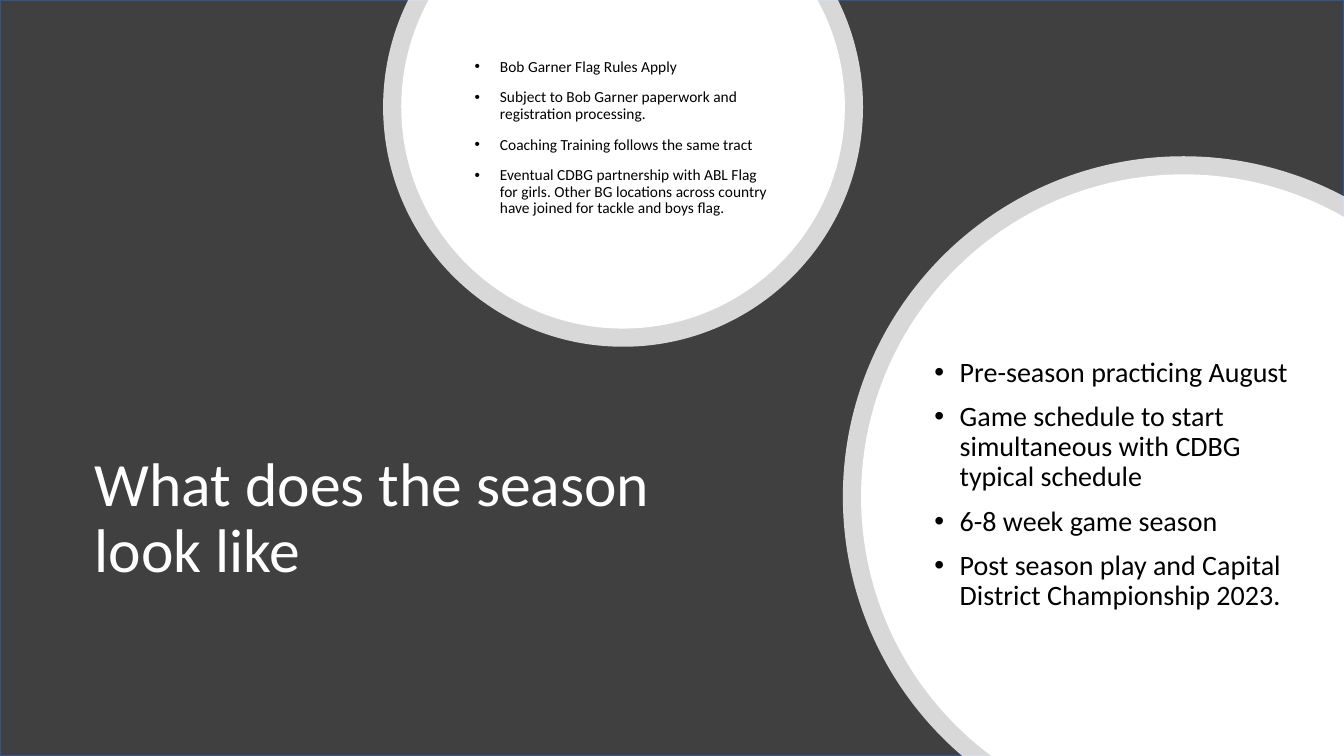
from math import acos, asin, cos, pi, sin, tan

from lxml.etree import SubElement
from pptx import Presentation
from pptx.dml.color import RGBColor
from pptx.enum.shapes import MSO_SHAPE as Preset
from pptx.enum.text import MSO_ANCHOR as Anchor
from pptx.oxml.ns import qn
from pptx.util import Inches, Pt

COLORS = {"backdrop": "404040", "outline": "325491", "white": "FFFFFF", "text": "000000"}
FONT = "Calibri"
WIDTH, HEIGHT = 13.33, 7.5
RIM = 0.18

TITLE = "What does the season look like"
RULES = [
    "Bob Garner Flag Rules Apply",
    "Subject to Bob Garner paperwork and registration processing.",
    "Coaching Training follows the same tract",
    "Eventual CDBG partnership with ABL Flag for girls. Other BG locations across country "
    "have joined for tackle and boys flag.",
]
SCHEDULE = [
    "Pre-season practicing August",
    "Game schedule to start simultaneous with CDBG typical schedule",
    "6-8 week game season",
    "Post season play and Capital District Championship 2023.",
]


def color(name):
    return RGBColor.from_string(COLORS[name])


def paint(shape, fill, alpha=None):
    shape.shadow.inherit = False
    shape.fill.solid()
    shape.fill.fore_color.rgb = color(fill)
    shape.line.fill.background()
    if alpha is not None:
        srgb = shape.fill._xPr.find(qn("a:solidFill"))[0]
        SubElement(srgb, qn("a:alpha"), val=str(alpha * 1000))


def add_backdrop(slide, box):
    shape = slide.shapes.add_shape(Preset.RECTANGLE, *map(Inches, box))
    paint(shape, "backdrop")
    shape.line.color.rgb = color("outline")
    shape.line.width = Pt(1)


def top_arc(center, radius):
    start = asin(-center[1] / radius)
    return [start, 0, pi / 2, pi, pi - start]


def corner_arc(center, radius):
    start = pi - asin((HEIGHT - center[1]) / radius)
    end = 2 * pi - acos((WIDTH - center[0]) / radius)
    return [start, pi, 3 * pi / 2, end]


def curve_points(center, radius, angles):
    def locate(angle, pull=0):
        return (center[0] + radius * (cos(angle) - pull * sin(angle)),
                center[1] + radius * (sin(angle) + pull * cos(angle)))

    points = [locate(angles[0])]
    for start, end in zip(angles, angles[1:]):
        pull = 4 / 3 * tan((end - start) / 4)
        points += [locate(start, pull), locate(end, -pull), locate(end)]
    return points


def bend(shape, curve_count):
    lines = list(shape._element.iter(qn("a:lnTo")))
    for index in range(curve_count):
        first, *others = lines[3 * index:3 * index + 3]
        outline = first.getparent()
        curve = outline.makeelement(qn("a:cubicBezTo"))
        outline.replace(first, curve)
        curve.append(first[0])
        for line in others:
            curve.append(line[0])
            outline.remove(line)


def add_disc(slide, center, radius, arc, corners, alpha=None):
    angles = arc(center, radius)
    points = curve_points(center, radius, angles) + corners
    outline = [(Inches(x), Inches(y)) for x, y in points]
    builder = slide.shapes.build_freeform(*outline[0], scale=1.0)
    builder.add_line_segments(outline[1:], close=True)
    shape = builder.convert_to_shape()
    bend(shape, len(angles) - 1)
    paint(shape, "white", alpha)


def add_text(slide, box, lines, size, text_color, bulleted=False):
    frame = slide.shapes.add_textbox(*map(Inches, box)).text_frame
    frame.word_wrap = True
    frame.vertical_anchor = Anchor.MIDDLE
    for index, line in enumerate(lines):
        paragraph = frame.add_paragraph() if index else frame.paragraphs[0]
        paragraph.line_spacing = 0.9
        if bulleted:
            paragraph.space_before = Pt(10)
            properties = paragraph._p.get_or_add_pPr()
            properties.set("marL", str(Inches(0.25)))
            properties.set("indent", str(-Inches(0.25)))
            SubElement(properties, qn("a:buFont"), typeface="Arial")
            SubElement(properties, qn("a:buChar"), char="•")
        run = paragraph.add_run()
        run.text = line
        run.font.name = FONT
        run.font.size = Pt(size)
        run.font.color.rgb = color(text_color)


def add_bubble(slide, center, radius, arc, corners, text_box, lines, size):
    add_disc(slide, center, radius, arc, corners, alpha=80)
    add_disc(slide, center, radius - RIM, arc, corners)
    add_text(slide, text_box, lines, size, "text", bulleted=True)


def build_season_slide(presentation):
    slide = presentation.slides.add_slide(presentation.slide_layouts[6])
    add_backdrop(slide, (0, 0, WIDTH, HEIGHT))
    add_text(slide, (0.84, 3.83, 6.62, 2.65), [TITLE], 44, "white")
    add_bubble(slide, (6.18, 1.06), 2.38, top_arc, [],
               (4.61, 0.39, 3.15, 1.96), RULES, 11)
    add_bubble(slide, (11.74, 4.93), 3.38, corner_arc, [(WIDTH, HEIGHT)],
               (9.17, 3.44, 3.8, 2.74), SCHEDULE, 20)


def main():
    presentation = Presentation()
    presentation.slide_width = Inches(WIDTH)
    presentation.slide_height = Inches(HEIGHT)
    build_season_slide(presentation)
    presentation.save("out.pptx")


if __name__ == "__main__":
    main()
